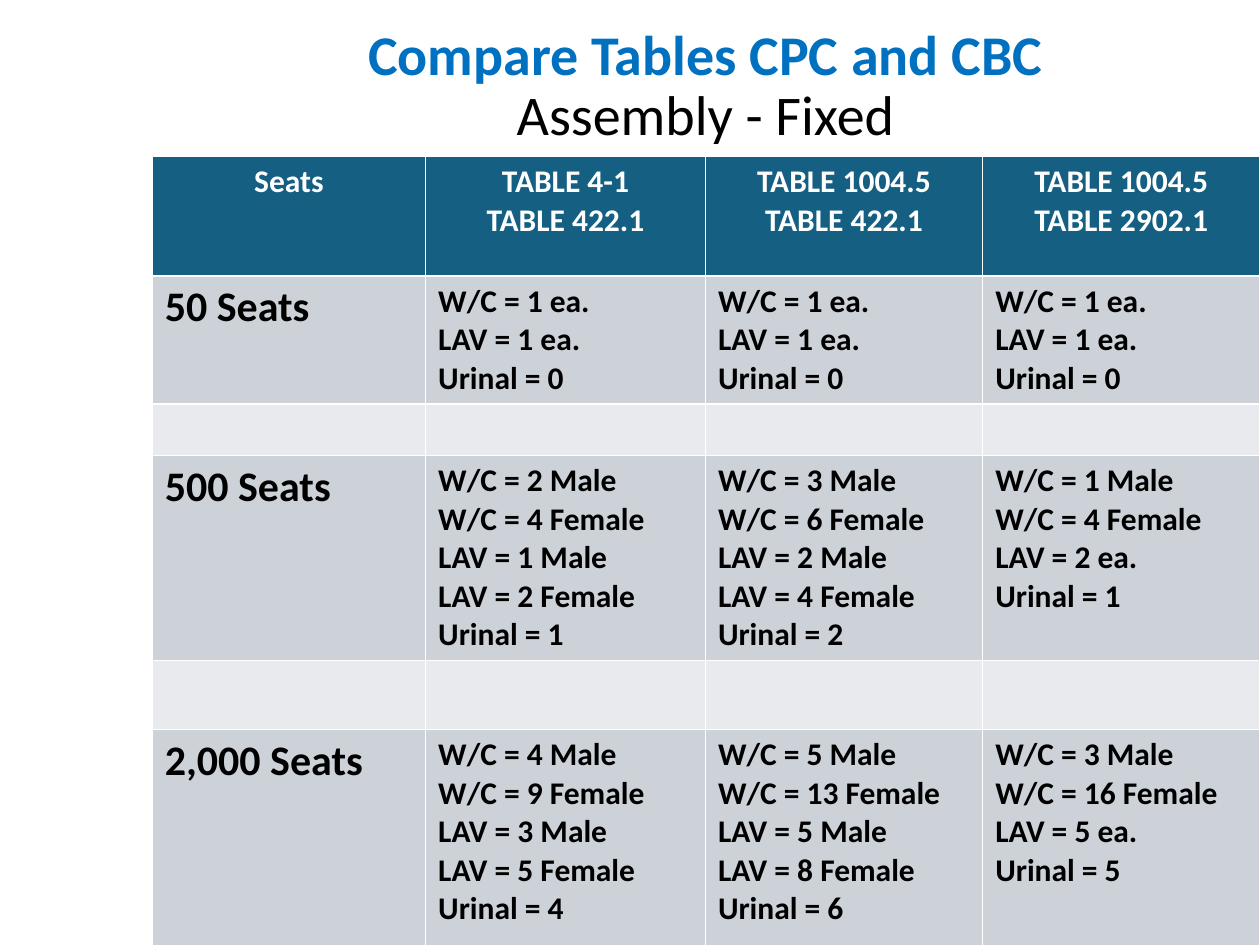
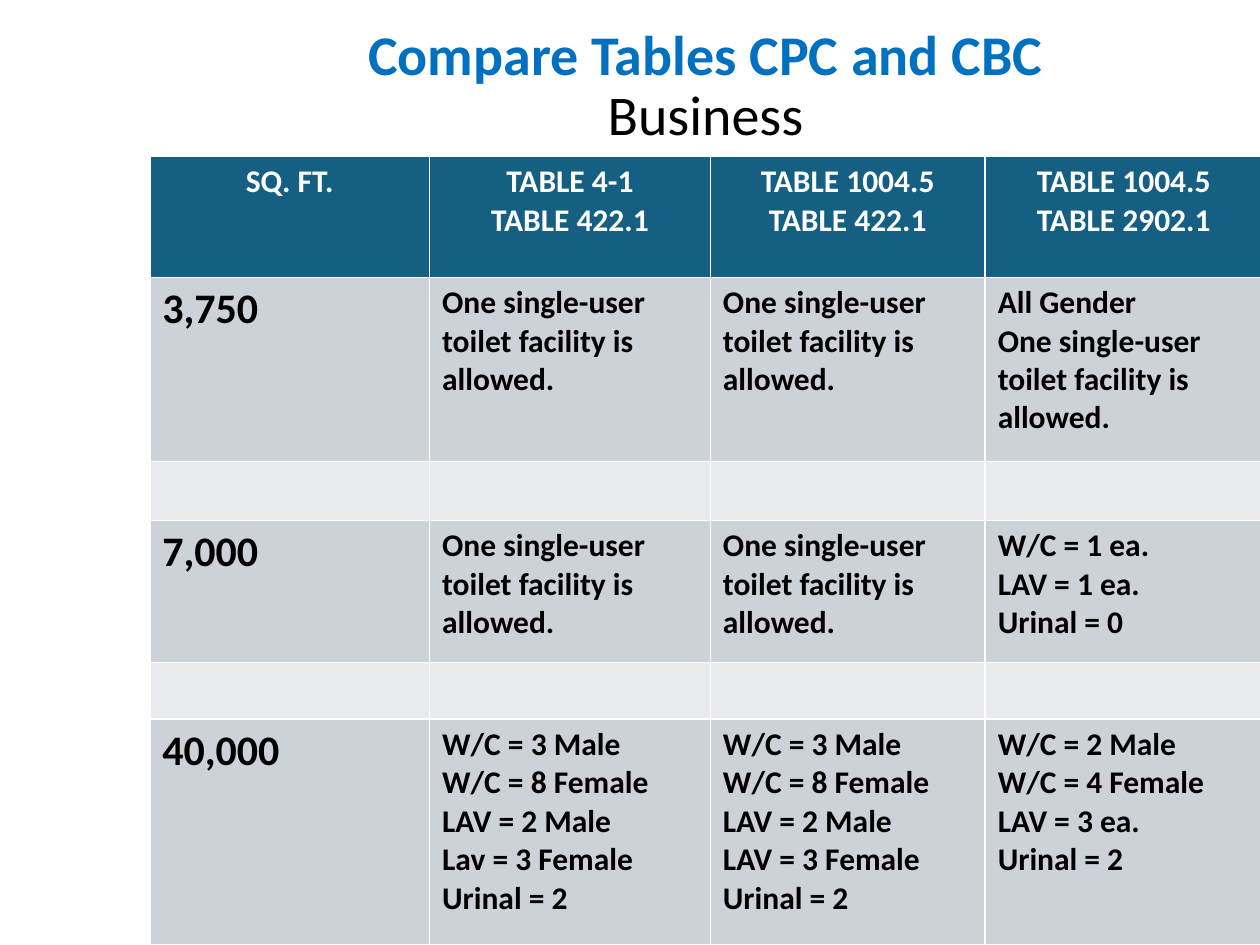
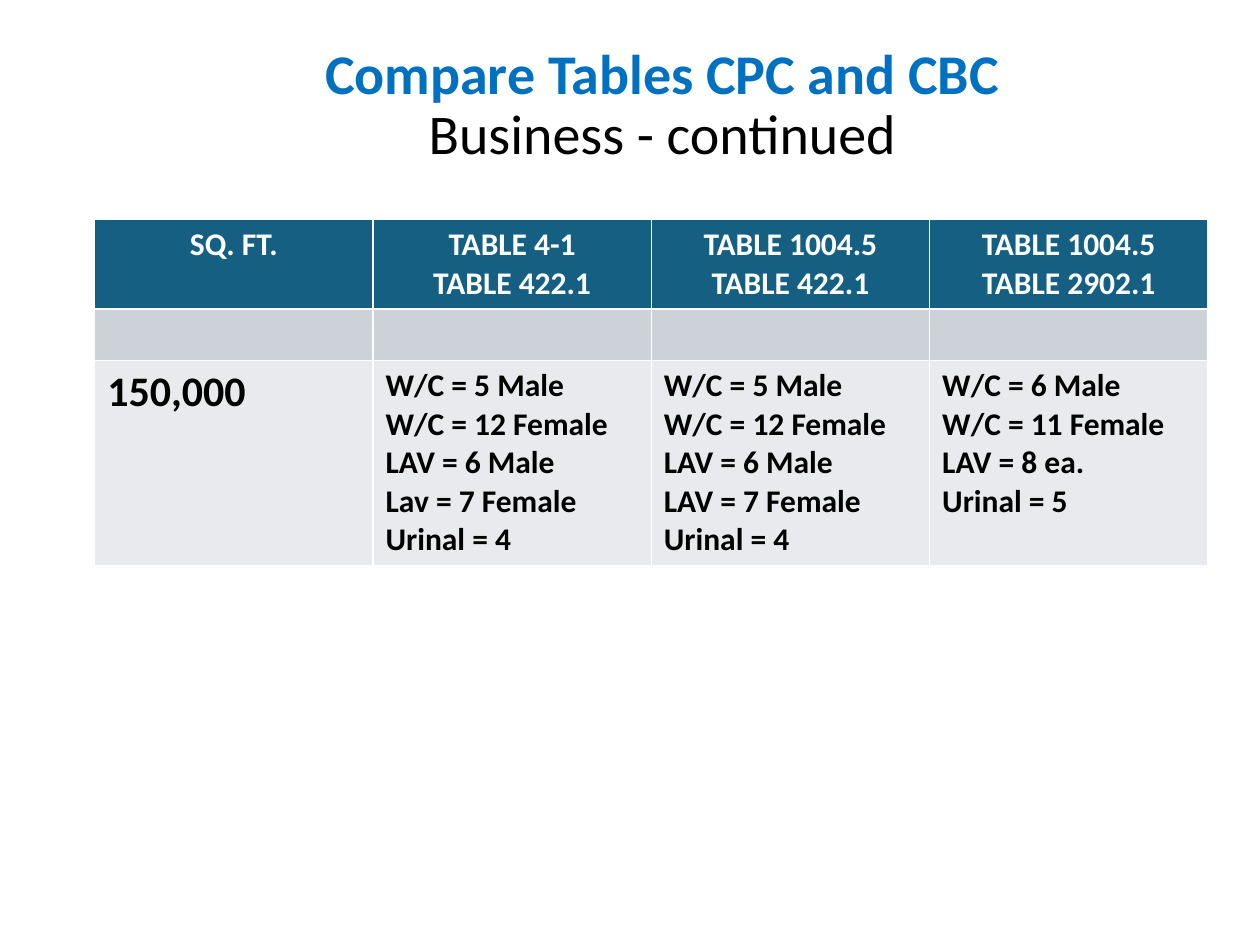
from dataclasses import dataclass

from pptx import Presentation
from pptx.dml.color import RGBColor
from pptx.enum.text import MSO_ANCHOR, MSO_AUTO_SIZE, PP_ALIGN
from pptx.presentation import Presentation as Deck
from pptx.slide import Slide
from pptx.table import _Cell as Cell
from pptx.util import Cm, Pt

COLORS = {
    "title": "0070C0",
    "text": "000000",
    "header_text": "FFFFFF",
    "header": "156082",
    "odd_row": "CCD2D8",
    "even_row": "E8EAED",
}
FONT = "Calibri"
TITLE = "Compare Tables CPC and CBC"
TITLE_WIDTH, TITLE_HEIGHT = 21.89, 2.77
TABLE_HEADINGS = (
    "TABLE 4-1\nTABLE 422.1",
    "TABLE 1004.5\nTABLE 422.1",
    "TABLE 1004.5\nTABLE 2902.1",
)
BLANK_ROW = ("",) * 4
SINGLE_USER = "One single-user toilet facility is allowed."
ONE_EACH = "W/C = 1 ea.\nLAV = 1 ea.\nUrinal = 0"


@dataclass(frozen=True)
class Comparison:
    """One slide: a table of fixture counts, with lengths in centimetres."""
    subtitle: str
    title_at: tuple[float, float]
    table_at: tuple[float, float]
    widths: tuple[float, ...]
    heights: tuple[float, ...]
    measure: str
    rows: tuple[tuple[str, ...], ...]


COMPARISONS = (
    Comparison(
        "Assembly - Fixed", (3.28, 0.38), (3.07, 3.15),
        (5.51, 5.64, 5.59, 5.59), (2.41, 2.57, 1.04, 4.11, 1.4, 4.37), "Seats",
        (
            ("50 Seats", ONE_EACH, ONE_EACH, ONE_EACH),
            BLANK_ROW,
            (
                "500 Seats",
                "W/C = 2 Male\nW/C = 4 Female\nLAV = 1 Male\nLAV = 2 Female\nUrinal = 1",
                "W/C = 3 Male\nW/C = 6 Female\nLAV = 2 Male\nLAV = 4 Female\nUrinal = 2",
                "W/C = 1 Male\nW/C = 4 Female\nLAV = 2 ea.\nUrinal = 1",
            ),
            BLANK_ROW,
            (
                "2,000 Seats",
                "W/C = 4 Male\nW/C = 9 Female\nLAV = 3 Male\nLAV = 5 Female\nUrinal = 4",
                "W/C = 5 Male\nW/C = 13 Female\nLAV = 5 Male\nLAV = 8 Female\nUrinal = 6",
                "W/C = 3 Male\nW/C = 16 Female\nLAV = 5 ea.\nUrinal = 5",
            ),
        ),
    ),
    Comparison(
        "Business", (3.28, 0.38), (3.02, 3.15),
        (5.64, 5.66, 5.54, 5.59), (2.44, 3.71, 1.19, 2.87, 1.14, 4.55), "SQ. FT.",
        (
            ("3,750", SINGLE_USER, SINGLE_USER, f"All Gender\n{SINGLE_USER}"),
            BLANK_ROW,
            ("7,000", SINGLE_USER, SINGLE_USER, ONE_EACH),
            BLANK_ROW,
            (
                "40,000",
                "W/C = 3 Male\nW/C = 8 Female\nLAV = 2 Male\nLav = 3 Female\nUrinal = 2",
                "W/C = 3 Male\nW/C = 8 Female\nLAV = 2 Male\nLAV = 3 Female\nUrinal = 2",
                "W/C = 2 Male\nW/C = 4 Female\nLAV = 3 ea.\nUrinal = 2",
            ),
        ),
    ),
    Comparison(
        "Business - continued", (2.41, 0.76), (1.91, 4.42),
        (5.61,) * 4, (1.75, 1.04, 4.11), "SQ. FT.",
        (
            BLANK_ROW,
            (
                "150,000",
                "W/C = 5 Male\nW/C = 12 Female\nLAV = 6 Male\nLav = 7 Female\nUrinal = 4",
                "W/C = 5 Male\nW/C = 12 Female\nLAV = 6 Male\nLAV = 7 Female\nUrinal = 4",
                "W/C = 6 Male\nW/C = 11 Female\nLAV = 8 ea.\nUrinal = 5",
            ),
        ),
    ),
)


def color(name: str) -> RGBColor:
    return RGBColor.from_string(COLORS[name])


def format_title(slide: Slide, comparison: Comparison) -> None:
    box = slide.shapes.title
    box.left, box.top = map(Cm, comparison.title_at)
    box.width, box.height = Cm(TITLE_WIDTH), Cm(TITLE_HEIGHT)
    frame = box.text_frame
    frame.auto_size = MSO_AUTO_SIZE.NONE
    frame.vertical_anchor = MSO_ANCHOR.MIDDLE
    para = frame.paragraphs[0]
    para.alignment = PP_ALIGN.CENTER
    para.line_spacing = 0.9
    para.font.name, para.font.size = FONT, Pt(32)
    heading = para.add_run()
    heading.text = TITLE
    heading.font.bold = True
    heading.font.color.rgb = color("title")
    para.add_line_break()
    subtitle = para.add_run()
    subtitle.text = comparison.subtitle
    subtitle.font.bold = False
    subtitle.font.color.rgb = color("text")


def fill_cell(cell: Cell, text: str, row: int, column: int) -> None:
    is_header = row == 0
    fill_name = "header" if is_header else "odd_row" if row % 2 else "even_row"
    cell.fill.solid()
    cell.fill.fore_color.rgb = color(fill_name)
    cell.text = text
    if not text:
        return
    for para in cell.text_frame.paragraphs:
        para.alignment = PP_ALIGN.CENTER if is_header else PP_ALIGN.LEFT
        para.font.name = FONT
        para.font.size = Pt(24 if column == 0 and not is_header else 18)
        para.font.bold = True
        para.font.color.rgb = color("header_text" if is_header else "text")


def add_comparison_table(slide: Slide, comparison: Comparison) -> None:
    rows = ((comparison.measure, *TABLE_HEADINGS), *comparison.rows)
    left, top = comparison.table_at
    table = slide.shapes.add_table(
        len(rows), len(comparison.widths), Cm(left), Cm(top),
        Cm(sum(comparison.widths)), Cm(sum(comparison.heights)),
    ).table
    for table_column, width in zip(table.columns, comparison.widths):
        table_column.width = Cm(width)
    for table_row, height in zip(table.rows, comparison.heights):
        table_row.height = Cm(height)
    for row, texts in enumerate(rows):
        for column, text in enumerate(texts):
            fill_cell(table.cell(row, column), text, row, column)


def add_comparison_slide(deck: Deck, comparison: Comparison) -> None:
    slide = deck.slides.add_slide(deck.slide_layouts.get_by_name("Title Only"))
    format_title(slide, comparison)
    add_comparison_table(slide, comparison)


def main() -> None:
    deck = Presentation()
    deck.slide_width, deck.slide_height = Cm(25.4), Cm(19.05)
    for comparison in COMPARISONS:
        add_comparison_slide(deck, comparison)
    deck.save("out.pptx")


if __name__ == "__main__":
    main()
